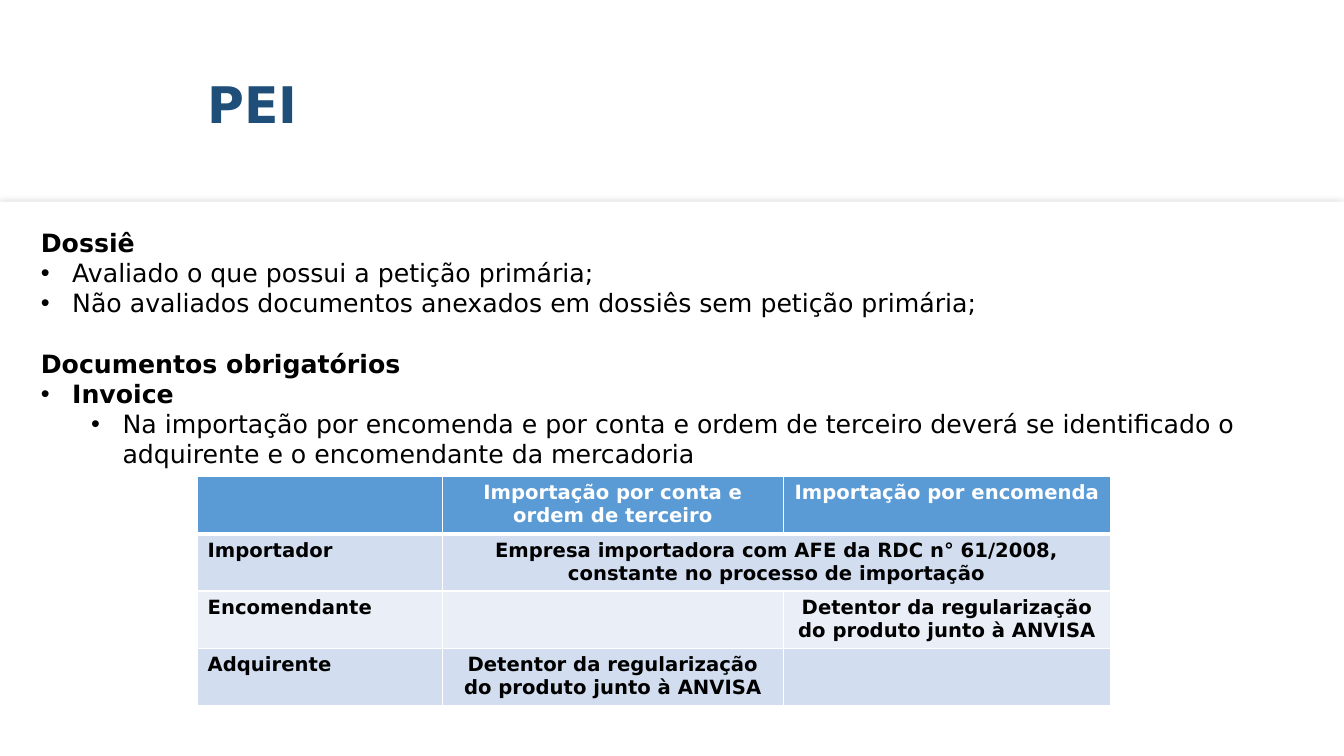
"""Build the PEI slide: title, document rules and a table of import roles."""
from dataclasses import dataclass

from lxml import etree
from pptx import Presentation
from pptx.dml.color import RGBColor
from pptx.enum.shapes import MSO_SHAPE
from pptx.enum.text import MSO_ANCHOR, MSO_AUTO_SIZE, PP_ALIGN
from pptx.oxml import parse_xml
from pptx.oxml.ns import nsdecls, qn
from pptx.util import Cm, Pt

RECT = MSO_SHAPE.RECTANGLE
LEFT, CENTER = PP_ALIGN.LEFT, PP_ALIGN.CENTER
TOP, MIDDLE = MSO_ANCHOR.TOP, MSO_ANCHOR.MIDDLE
NONE, GROW = MSO_AUTO_SIZE.NONE, MSO_AUTO_SIZE.SHAPE_TO_FIT_TEXT


@dataclass(frozen=True)
class Theme:
    """Hold the font, colours and type sizes."""
    font: str = "DejaVu Sans"
    white: str = "FFFFFF"
    black: str = "000000"
    navy: str = "1F4E79"
    blue: str = "5B9BD5"
    bands: tuple = ("D2DEEF", "EAEFF7")
    shade: str = "A6A6A6"
    title: int = 36
    body: int = 18
    cell: int = 14


theme = Theme()


def add_run(para, text, size, color, bold):
    """Add one styled run to a paragraph."""
    run = para.add_run()
    run.text = text
    run.font.name = theme.font
    run.font.size = Pt(size)
    run.font.bold = bold
    run.font.color.rgb = RGBColor.from_string(color)


def add_box(left, top, width, height):
    """Add a plain white rectangle without a line."""
    box = slide.shapes.add_shape(RECT, left, top, width, height)
    box.shadow.inherit = False
    box.fill.solid()
    box.fill.fore_color.rgb = RGBColor.from_string(theme.white)
    box.line.fill.background()
    return box


deck = Presentation()
deck.slide_width, deck.slide_height = Cm(33.87), Cm(19.05)
slide = deck.slides.add_slide(deck.slide_layouts[5])

panel = add_box(Cm(0), Cm(5.08), deck.slide_width, Cm(13.97))
glow = panel._element.spPr.find(qn("a:effectLst"))
glow.append(parse_xml(
    f'<a:outerShdw {nsdecls("a")} blurRad="{Pt(5)}" dist="0" dir="0">'
    f'<a:srgbClr val="{theme.shade}"><a:alpha val="42000"/></a:srgbClr>'
    '</a:outerShdw>'))

title = slide.shapes.title
title.left, title.top, title.width, title.height = Cm(4.98), Cm(1.7), Cm(3.02), Cm(1.8)
frame = title.text_frame
frame.word_wrap = False
frame.auto_size = GROW
frame.vertical_anchor = MIDDLE
frame.paragraphs[0].alignment = LEFT
add_run(frame.paragraphs[0], "PEI", theme.title, theme.navy, True)

rules = [
    ("Dossiê", None, True, 0),
    ("Avaliado o que possui a petição primária;", 0, False, 0),
    ("Não avaliados documentos anexados em dossiês sem petição primária;", 0, False, 0),
    ("Documentos obrigatórios", None, True, 21.5),
    ("Invoice", 0, True, 0),
    ("Na importação por encomenda e por conta e ordem de terceiro deverá se "
     "identificado o adquirente e o encomendante da mercadoria", 1, False, 0),
]
body = add_box(Cm(0.78), Cm(5.6), Cm(31.83), Cm(6.4))
frame = body.text_frame
frame.word_wrap = True
frame.auto_size = GROW
frame.vertical_anchor = TOP
for i, (text, level, bold, gap) in enumerate(rules):
    para = frame.paragraphs[0] if i == 0 else frame.add_paragraph()
    para.alignment = LEFT
    if level is not None:
        para.level = level
        props = para._p.get_or_add_pPr()
        props.set("marL", str(Cm(0.79 + 1.27 * level)))
        props.set("indent", str(Cm(-0.79)))
        etree.SubElement(props, qn("a:buFont")).set("typeface", "Arial")
        etree.SubElement(props, qn("a:buChar")).set("char", "•")
    if gap:
        para.space_before = Pt(gap)
    add_run(para, text, theme.body, theme.black, bold)

holder = "Detentor da regularização do produto junto à ANVISA"
rows = [
    ("", "Importação por conta e ordem de terceiro", "Importação por encomenda"),
    ("Importador", "Empresa importadora com AFE da RDC n° 61/2008, "
     "constante no processo de importação", ""),
    ("Encomendante", "", holder),
    ("Adquirente", holder, ""),
]
widths = [6.17, 8.59, 8.25]
high = 1.44
grid = slide.shapes.add_table(len(rows), len(widths), Cm(4.98), Cm(12.01),
                              Cm(sum(widths)), Cm(high * len(rows))).table
for col, width in zip(grid.columns, widths):
    col.width = Cm(width)
for r, row in enumerate(rows):
    grid.rows[r].height = Cm(high)
    for c, text in enumerate(row):
        cell = grid.cell(r, c)
        props = cell._tc.get_or_add_tcPr()
        for side in "LRTB":
            thick = 3 if (r, side) in ((0, "B"), (1, "T")) else 1
            props.append(parse_xml(
                f'<a:ln{side} {nsdecls("a")} w="{Pt(thick)}"><a:solidFill>'
                f'<a:srgbClr val="{theme.white}"/></a:solidFill></a:ln{side}>'))
        cell.fill.solid()
        shade = theme.bands[(r - 1) % 2] if r else theme.blue
        cell.fill.fore_color.rgb = RGBColor.from_string(shade)
        if text:
            para = cell.text_frame.paragraphs[0]
            para.alignment = CENTER if c else LEFT
            color = theme.black if r else theme.white
            add_run(para, text, theme.cell, color, True)
grid.cell(1, 1).merge(grid.cell(1, 2))

deck.save("out.pptx")
